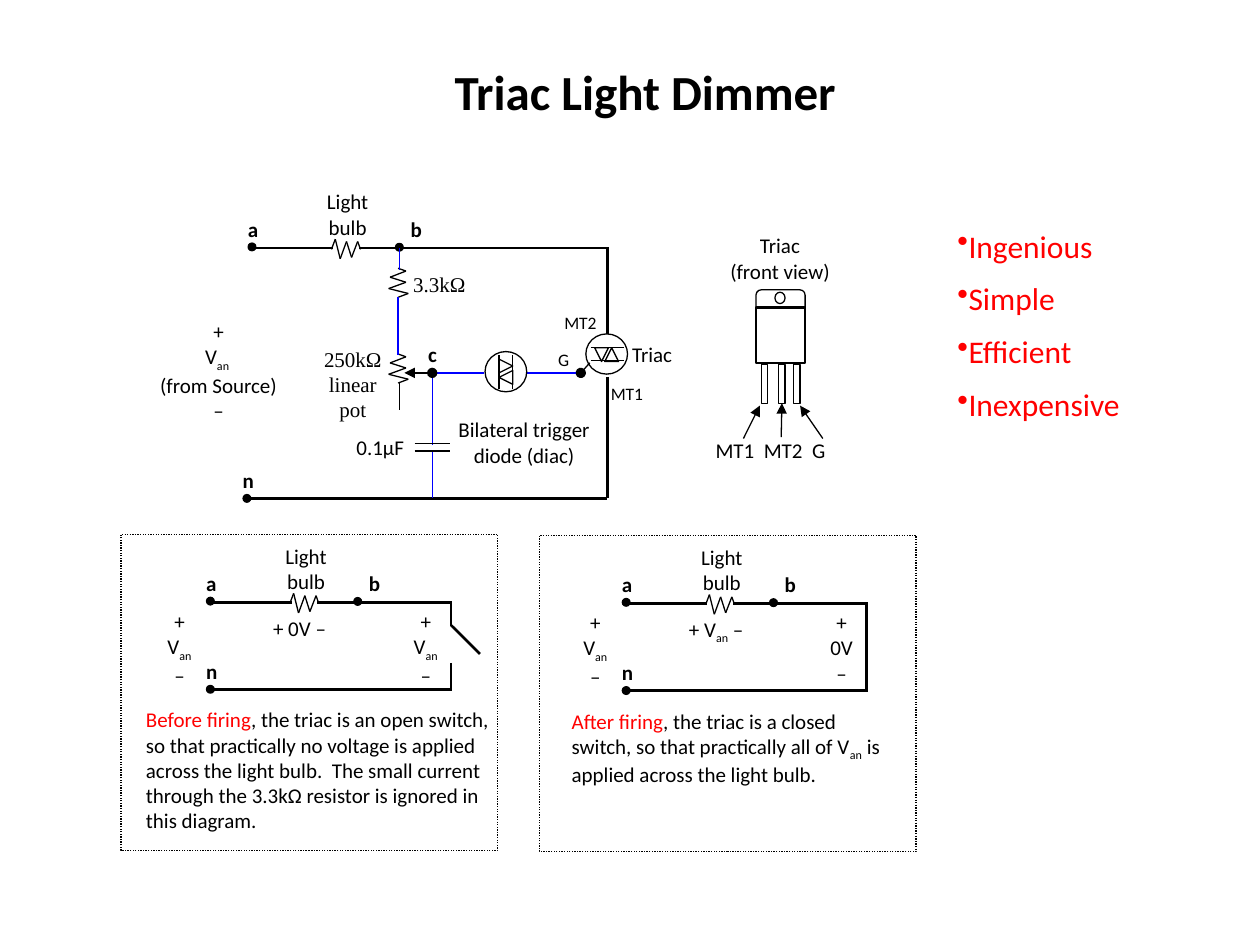
from dataclasses import dataclass

import pptx
import pptx.dml.color
import pptx.enum.dml
import pptx.enum.shapes
import pptx.enum.text
import pptx.oxml.xmlchemy
import pptx.util

Pt = pptx.util.Pt
Kind = pptx.enum.shapes.MSO_SHAPE
Align = pptx.enum.text.PP_ALIGN


@dataclass(frozen=True)
class Theme:
    black: str = "000000"
    white: str = "FFFFFF"
    red: str = "FF0000"
    blue: str = "0000FF"
    sans: str = "Calibri"
    serif: str = "Times New Roman"
    title: float = 28
    point: float = 18
    body: float = 12
    pin: float = 10
    thin: float = 0.75
    plate: float = 1
    thick: float = 1.5


T = Theme()
VAN = ["V", ("an", "sub")]
SUPPLY = ["+", VAN, "–"]
ZIGZAG = [(0, 0), (2.2, -5.8), (5, 5.4), (8.6, -4.5),
          (11.5, 4.6), (15, -4.5), (16.6, 0)]


def rgb(code):
    return pptx.dml.color.RGBColor.from_string(code)


def add(node, tag, **attrs):
    child = pptx.oxml.xmlchemy.OxmlElement(tag)
    for key, val in attrs.items():
        child.set(key, val)
    node.append(child)
    return child


def write(par, line, size, font=T.sans, color=T.black, bold=False):
    """Fill a paragraph; a piece is plain text or (text, "sub" or "red")."""
    for piece in [line] if isinstance(line, str) else line:
        words, mark = (piece, "") if isinstance(piece, str) else piece
        run = par.add_run()
        run.text = words
        run.font.size = Pt(size)
        run.font.name = font
        run.font.bold = bold
        run.font.color.rgb = rgb(T.red if mark == "red" else color)
        if mark == "sub":
            run.font._element.set("baseline", "-25000")


def text(slide, box, lines, size=T.body, align=Align.LEFT, **style):
    frame = slide.shapes.add_textbox(*map(Pt, box)).text_frame
    frame.word_wrap = True
    for i, line in enumerate(lines):
        par = frame.add_paragraph() if i else frame.paragraphs[0]
        par.alignment = align
        write(par, line, size, **style)
    return frame


def center(slide, box, lines, **style):
    return text(slide, box, lines, align=Align.CENTER, **style)


def shape(slide, kind, box, fill=None, width=T.thin, turn=0):
    item = slide.shapes.add_shape(kind, *map(Pt, box))
    item.shadow.inherit = False
    item.rotation = turn
    if fill:
        item.fill.solid()
        item.fill.fore_color.rgb = rgb(fill)
    else:
        item.fill.background()
    item.line.color.rgb = rgb(T.black)
    item.line.width = Pt(width)
    return item


def wire(slide, x1, y1, x2, y2, width=T.thin, color=T.black, head=None, tail=None):
    item = slide.shapes.add_connector(
        pptx.enum.shapes.MSO_CONNECTOR.STRAIGHT, Pt(x1), Pt(y1), Pt(x2), Pt(y2))
    item.line.color.rgb = rgb(color)
    item.line.width = Pt(width)
    line = item.line._get_or_add_ln()
    for tag, end in (("a:headEnd", head), ("a:tailEnd", tail)):
        if end:
            add(line, tag, type=end)
    add(item._element.spPr, "a:effectLst")
    return item


def coil(slide, x, y, up=False):
    """Draw a resistor that runs right, or up, from its start."""
    spots = [(x - dy, y - dx) if up else (x + dx, y + dy) for dx, dy in ZIGZAG]
    for start, end in zip(spots, spots[1:]):
        wire(slide, *start, *end)


def node(slide, x, y, name, shift=-9.5):
    shape(slide, Kind.OVAL, (x - 2.2, y - 2.2, 4.4, 4.4), T.black)
    text(slide, (x + shift, y - 21.2, 25.2, 22.3), [name], bold=True)


def feed(slide, x, y, right):
    """Draw the top rail: node a, light bulb, node b and the wire to the right."""
    wire(slide, x, y, x + 46.5, y, T.thick)
    coil(slide, x + 45.4, y + 0.7)
    wire(slide, x + 61.2, y, right, y, T.thick)
    center(slide, (x + 25.5, y - 37.4, 58.3, 36.7), ["Light", "bulb"])
    node(slide, x, y - 0.7, "a")
    node(slide, x + 84.2, y - 0.5, "b", -0.7)


def package(slide):
    legs = [shape(slide, Kind.RECTANGLE, (x, 208.1, 3.6, 22.3), T.white)
            for x in (435, 445, 453.6)]
    tab = shape(slide, Kind.ROUNDED_RECTANGLE, (432, 165.6, 28.1, 18))
    tab.adjustments[0] = 0.167
    shape(slide, Kind.RECTANGLE, (432, 175.7, 28.1, 31.7), T.white, T.thick)
    shape(slide, Kind.OVAL, (442.8, 167, 5.8, 6.5), T.white)
    center(slide, (406.8, 129.6, 77.8, 39.6), ["Triac", "(front view)"])
    text(slide, (401.8, 246.2, 90, 30.2), ["MT1  MT2  G"])
    wire(slide, 424.8, 250.6, 434.2, 231.8, tail="triangle")
    gate = wire(slide, 446.4, 249.8, 446.8, 230.4, tail="triangle")
    gate.end_connect(legs[1], 2)
    wire(slide, 470.2, 250.6, 457.2, 231.8, tail="triangle")


def diac(slide):
    shape(slide, Kind.OVAL, (277.2, 200.9, 23.8, 23))
    for y, turn in ((205.2, 90), (211.7, 270)):
        shape(slide, Kind.ISOSCELES_TRIANGLE, (285.1, y, 7.9, 7.9), T.white, turn=turn)
    for x in (285.1, 293):
        wire(slide, x, 203, x, 222.3)


def triac(slide):
    shape(slide, Kind.OVAL, (334.8, 190.8, 23.8, 23))
    for x, turn in ((339.8, 180), (345.6, 0)):
        shape(slide, Kind.ISOSCELES_TRIANGLE, (x, 198.7, 7.9, 7.9), T.white, turn=turn)
    for y in (198.7, 205.9):
        wire(slide, 337.7, y, 356.4, y)
    wire(slide, 337, 207.4, 331.9, 213.1, tail="oval")


def dimmer(slide):
    right, base, mid = 347, 284.8, 213.1
    feed(slide, 144, 141.8, right)
    wire(slide, right, 190.8, right, 141.1, T.thick)
    wire(slide, right, 215.3, right, base, T.thick)
    wire(slide, 141.8, base, right, base, T.thick)
    node(slide, 141.1, base, "n")
    for y in (169.9, 218.9):
        coil(slide, 227.5, y, up=True)
    wire(slide, 228.2, 234, 228.2, 218.9)
    for ends in ((228.2, 141.8, 228.2, 154.1), (227.5, 169.9, 227.5, 203),
                 (248.4, mid, 276.5, mid), (301, mid, 331.2, mid),
                 (247, 214.6, 247, 254.2), (247, 257.8, 247, base)):
        wire(slide, *ends, color=T.blue)
    for y in (253.4, 257.8):
        wire(slide, 236.9, y, 257, y, T.plate)
    wire(slide, 231.1, mid, 247, mid, head="triangle", tail="oval")
    diac(slide)
    triac(slide)
    for x, y, name in ((311.8, 195.8, "G"), (315.4, 175, "MT2"), (342, 215.3, "MT1")):
        text(slide, (x, y, 41, 18.7), [name], T.pin)
    center(slide, (80.6, 178.6, 88.6, 77.8),
           ["+", ["V", ("an ", "sub")], "(from Source)", "–"])
    text(slide, (196.6, 244.8, 48.2, 28.8), ["0.1µF"])
    text(slide, (229, 151.9, 49, 18.7), ["3.3kΩ"], font=T.serif)
    center(slide, (177.1, 194.4, 49, 49.7), ["250kΩ linear pot"], font=T.serif)
    text(slide, (354.2, 191.5, 41, 18.7), ["Triac"])
    center(slide, (253.4, 234.7, 92.2, 39.6), ["Bilateral trigger diode (diac)"])
    text(slide, (237.6, 191.5, 25.2, 22.3), ["c"], bold=True)


def panel(slide, left, x, y, drop, load, note, shift, width):
    """Draw one framed equivalent circuit whose node a is at x, y."""
    frame = shape(slide, Kind.RECTANGLE, (left, y - 38.9, 215.3, 180.7))
    frame.line.dash_style = pptx.enum.dml.MSO_LINE.ROUND_DOT
    base = y + 49.7
    feed(slide, x, y, x + 138)
    wire(slide, x - 2, base, x + 138, base, T.thick)
    node(slide, x, base, "n")
    center(slide, (x - 46.4, y, 57.6, 49), SUPPLY)
    center(slide, (x + 94.3, y, 57.6, 49), load)
    text(slide, (x + 28.8, y + 4, 57.6, 32.4), [drop])
    text(slide, (x + shift, y + 56.2, width, 82.1), [note])


def points(slide, box, lines):
    frame = text(slide, box, lines, T.point, color=T.red)
    for par in frame.paragraphs:
        par.space_before = Pt(8.5)
        add(par._p.get_or_add_pPr(), "a:buChar", char="•")


def main():
    deck = pptx.Presentation()
    deck.slide_width, deck.slide_height = Pt(720), Pt(540)
    slide = deck.slides.add_slide(deck.slide_layouts[5])
    title = slide.shapes.title
    title.left, title.top, title.width, title.height = map(Pt, (69.1, 18, 599, 67.7))
    title.text_frame.vertical_anchor = pptx.enum.text.MSO_ANCHOR.MIDDLE
    par = title.text_frame.paragraphs[0]
    par.alignment = Align.CENTER
    write(par, "Triac Light Dimmer", T.title, bold=True)

    package(slide)
    dimmer(slide)
    points(slide, (540, 126, 126, 126.7),
           ["Ingenious", "Simple", "Efficient", "Inexpensive"])

    x, y = 120.2, 344.2
    panel(slide, 69.1, x, y, "+ 0V –", SUPPLY,
          [("Before firing", "red"),
           ", the triac is an open switch, so that practically no voltage is "
           "applied across the light bulb.  The small current through the 3.3kΩ "
           "resistor is ignored in this diagram."], -43.9, 214.6)
    side = x + 137.5
    for ends in ((side, y, side, y + 13.7), (side, y + 13, side + 16.6, y + 29.5),
                 (side, y + 34.6, side, y + 49.7)):
        wire(slide, *ends, T.thick)

    x, y = 357.8, 344.9
    panel(slide, 308.2, x, y, ["+ ", *VAN, " –"], ["+", "0V", "–"],
          [("After firing", "red"),
           ", the triac is a closed switch, so that practically all of ", *VAN,
           " is applied across the light bulb."], -38.2, 196.6)
    wire(slide, x + 137.5, y, x + 137.5, y + 49.7, T.thick)
    deck.save("out.pptx")


if __name__ == "__main__":
    main()
